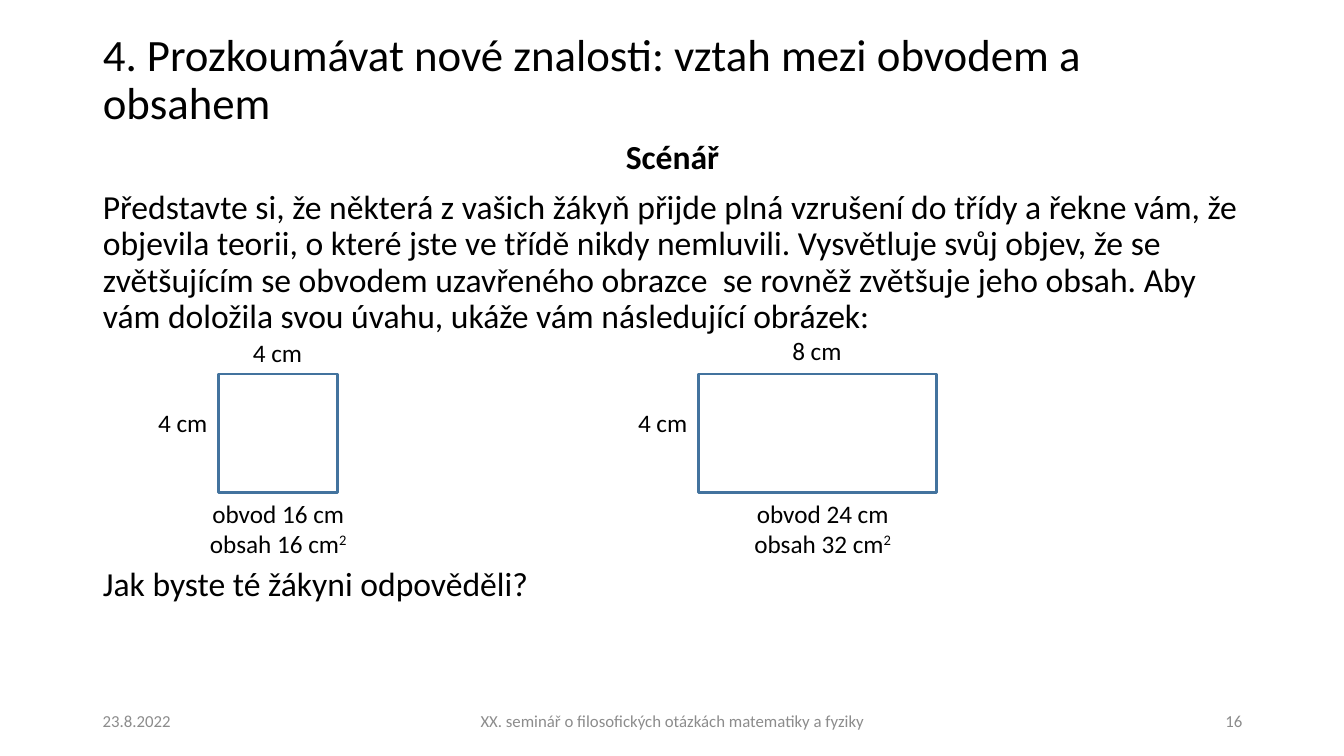
import pptx
import pptx.util
import pptx.dml.color
import pptx.enum.shapes
import pptx.enum.text
import pptx.oxml.ns
import lxml.etree

Inches = pptx.util.Inches
Pt = pptx.util.Pt
ALIGN = pptx.enum.text.PP_ALIGN
ANCHOR = pptx.enum.text.MSO_ANCHOR
FONT = "Calibri"
COLORS = {"text": "000000", "footer": "8C8C8C", "outline": "43739E"}


def color(name):
    return pptx.dml.color.RGBColor.from_string(COLORS[name])


def place(shape, left, top, width, height):
    shape.left, shape.top = Inches(left), Inches(top)
    shape.width, shape.height = Inches(width), Inches(height)


def format_paragraph(paragraph, size, align=ALIGN.LEFT, color_name="text", bold=False):
    paragraph.alignment = align
    for run in paragraph.runs:
        run.font.name = FONT
        run.font.size = Pt(size)
        run.font.bold = bold
        run.font.color.rgb = color(color_name)


def add_label(slide, box, text, size=18, align=ALIGN.LEFT, color_name="text", wrap=False):
    label = slide.shapes.add_textbox(*map(Inches, box))
    frame = label.text_frame
    frame.word_wrap = wrap
    frame.vertical_anchor = ANCHOR.MIDDLE if wrap else ANCHOR.TOP
    frame.text = text
    for paragraph in frame.paragraphs:
        format_paragraph(paragraph, size, align, color_name)
    return label


def add_title(slide, box, text):
    title = slide.shapes.title
    place(title, *box)
    frame = title.text_frame
    frame.text = text
    frame.auto_size = pptx.enum.text.MSO_AUTO_SIZE.NONE
    frame.vertical_anchor = ANCHOR.MIDDLE
    frame.paragraphs[0].line_spacing = 0.9
    format_paragraph(frame.paragraphs[0], 32)


def add_scenario(slide, box, heading, story, question):
    body = slide.placeholders[1]
    place(body, *box)
    frame = body.text_frame
    frame.text = "\n".join([heading, story, question])
    frame.auto_size = pptx.enum.text.MSO_AUTO_SIZE.NONE
    frame.vertical_anchor = ANCHOR.TOP
    # The space before the question leaves room for the figures
    styles = [(ALIGN.CENTER, 10, True), (ALIGN.LEFT, 10, False), (ALIGN.LEFT, 166, False)]
    for paragraph, (align, space, bold) in zip(frame.paragraphs, styles):
        format_paragraph(paragraph, 24, align, bold=bold)
        paragraph.line_spacing = 0.9
        paragraph.space_before = Pt(space)
        paragraph.space_after = Pt(0)
        properties = paragraph._p.get_or_add_pPr()
        properties.set("marL", "0")
        properties.set("indent", "0")
        lxml.etree.SubElement(properties, pptx.oxml.ns.qn("a:buNone"))


def add_figure(slide, box, sides, perimeter, area, label_rise, caption_shift):
    left, top, width, height = box
    center = left + width / 2
    rectangle = slide.shapes.add_shape(
        pptx.enum.shapes.MSO_SHAPE.RECTANGLE, *map(Inches, box))
    rectangle.shadow.inherit = False
    rectangle.fill.background()
    rectangle.line.color.rgb = color("outline")
    rectangle.line.width = Pt(2)

    # Side lengths
    add_label(slide, (center - 0.35, top - label_rise, 0.7, 0.4), sides[0])
    add_label(slide, (left - 0.7, top + 0.28, 0.7, 0.4), sides[1])

    # Perimeter and area
    caption = add_label(slide, (center - 0.8 + caption_shift, top + height, 1.6, 0.71),
                        f"obvod {perimeter} cm\nobsah {area} cm", align=ALIGN.CENTER)
    area_line = caption.text_frame.paragraphs[1]
    exponent = area_line.add_run()
    exponent.text = "2"
    format_paragraph(area_line, 18, ALIGN.CENTER)
    exponent._r.get_or_add_rPr().set("baseline", "30000")


def add_footer(slide, box, date, event, number):
    left, top, width, height = box
    parts = [(date, left, 3, ALIGN.LEFT),
             (event, left + (width - 4.5) / 2, 4.5, ALIGN.CENTER),
             (number, left + width - 3, 3, ALIGN.RIGHT)]
    for text, part_left, part_width, align in parts:
        add_label(slide, (part_left, top, part_width, height), text, 12, align,
                  "footer", wrap=True)


def main():
    presentation = pptx.Presentation()
    presentation.slide_width = Inches(13.33)
    presentation.slide_height = Inches(7.5)
    slide = presentation.slides.add_slide(presentation.slide_layouts[1])

    add_title(slide, (0.92, 0.4, 11.63, 0.81),
              "4. Prozkoumávat nové znalosti: vztah mezi obvodem a obsahem")
    add_scenario(
        slide, (0.92, 1.34, 11.5, 5.68), "Scénář",
        "Představte si, že některá z vašich žákyň přijde plná vzrušení do třídy "
        "a řekne vám, že objevila teorii, o které jste ve třídě nikdy nemluvili. "
        "Vysvětluje svůj objev, že se zvětšujícím se obvodem uzavřeného obrazce  "
        "se rovněž zvětšuje jeho obsah. Aby vám doložila svou úvahu, ukáže vám "
        "následující obrázek:",
        "Jak byste té žákyni odpověděli?")
    add_footer(slide, (0.92, 6.95, 11.5, 0.4), "23.8.2022",
               "XX. seminář o filosofických otázkách matematiky a fyziky", "16")

    # The square and the rectangle twice as wide
    side = 1.18
    add_figure(slide, (2.17, 3.71, side, side), ("4 cm", "4 cm"), 16, 16, 0.41, 0)
    add_figure(slide, (6.93, 3.71, 2 * side, side), ("8 cm", "4 cm"), 24, 32, 0.43, 0.05)

    presentation.save("out.pptx")


if __name__ == "__main__":
    main()
